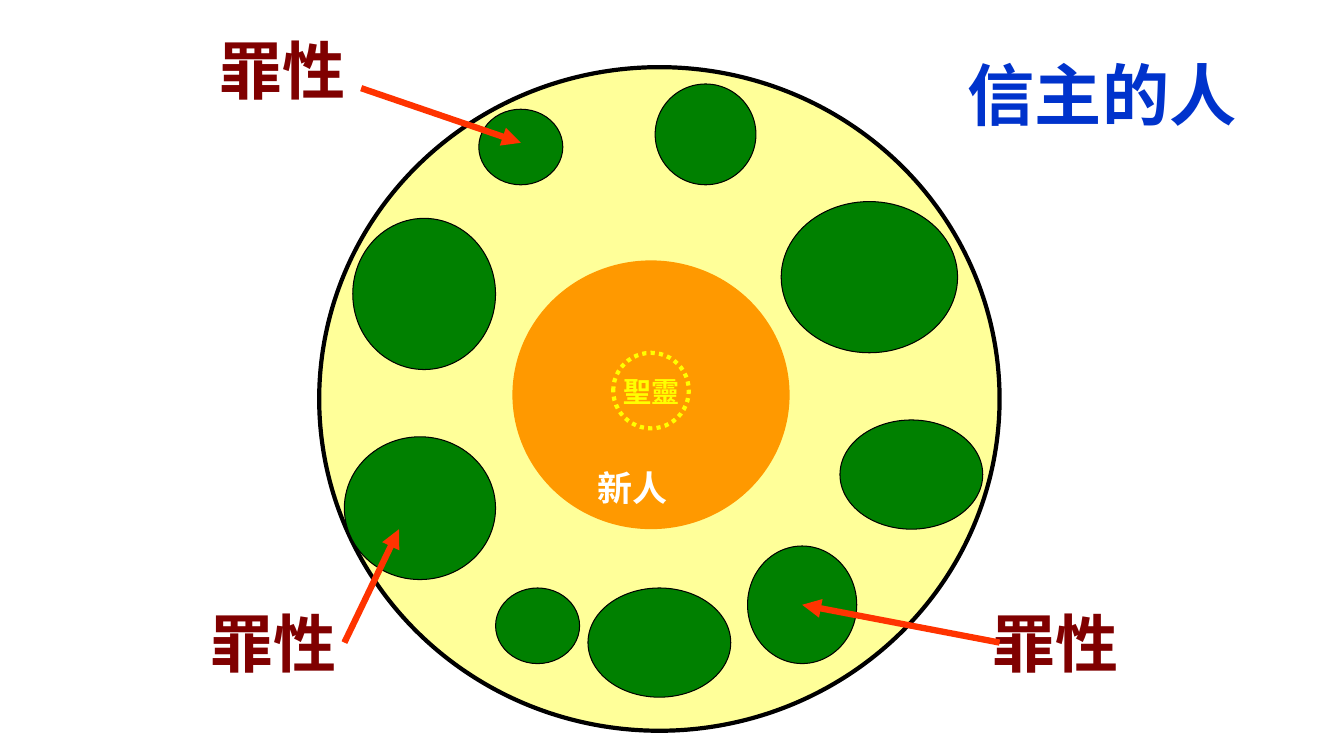
from lxml.etree import SubElement
from pptx import Presentation
from pptx.dml.color import RGBColor
from pptx.enum.dml import MSO_LINE
from pptx.enum.shapes import MSO_CONNECTOR, MSO_SHAPE
from pptx.enum.text import MSO_ANCHOR, MSO_AUTO_SIZE, PP_ALIGN
from pptx.oxml.ns import qn
from pptx.util import Emu, Pt

PX = 9525  # EMU per px, slide is 1280 x 720 px
FONT = "Noto Sans CJK SC"

BLACK = RGBColor(0x00, 0x00, 0x00)
WHITE = RGBColor(0xFF, 0xFF, 0xFF)
CREAM = RGBColor(0xFF, 0xFF, 0x99)
ORANGE = RGBColor(0xFF, 0x99, 0x00)
YELLOW = RGBColor(0xFF, 0xFF, 0x00)
GREEN = RGBColor(0x00, 0x80, 0x00)
MAROON = RGBColor(0x80, 0x00, 0x00)
BLUE = RGBColor(0x00, 0x33, 0xCC)
RED = RGBColor(0xFF, 0x33, 0x00)

PERSON = (304, 64, 648, 632)
# Sin circles, relative to the person circle: left, top, width, height
SINS = [
    (32, 144, 136, 144), (24, 352, 144, 136), (152, 40, 80, 72),
    (496, 336, 136, 104), (408, 456, 104, 112), (440, 128, 168, 144),
    (320, 16, 96, 96), (168, 496, 80, 72), (256, 496, 136, 104),
]
# Sin labels: box, arrow start relative to the box, arrow tip on the slide
SIN_LABELS = [
    ((200, 25, 141, 83), (144, 59), (496, 136)),
    ((936, 571, 141, 83), (16, 41), (764, 576)),
    ((191, 571, 141, 83), (137, 41), (380, 504)),
]


def px(*lengths):
    return [Emu(n * PX) for n in lengths]


def inside(box, part):
    """Move a part given relative to a box onto the slide."""
    return (box[0] + part[0], box[1] + part[1], *part[2:])


def write(tf, text, size, color, wrap=True):
    tf.word_wrap = wrap
    tf.auto_size = MSO_AUTO_SIZE.NONE
    tf.vertical_anchor = MSO_ANCHOR.TOP
    p = tf.paragraphs[0]
    p.alignment = PP_ALIGN.LEFT
    r = p.add_run()
    r.text = text
    r.font.name, r.font.size, r.font.bold = FONT, Pt(size), True
    r.font.color.rgb = color
    SubElement(r.font._element, qn("a:ea"), typeface=FONT)


def add_text(s, box, text, size, color, wrap=True):
    write(s.shapes.add_textbox(*px(*box)).text_frame, text, size, color, wrap)


def add_circle(s, box, fill, line=None, width=0.75, dash=None):
    sp = s.shapes.add_shape(MSO_SHAPE.OVAL, *px(*box))
    sp.shadow.inherit = False
    sp.fill.solid()
    sp.fill.fore_color.rgb = fill
    if line is None:
        sp.line.fill.background()
        return
    sp.line.color.rgb = line
    sp.line.width = Pt(width)
    if dash:
        sp.line.dash_style = dash


def add_arrow(s, start, tip):
    cx = s.shapes.add_connector(MSO_CONNECTOR.STRAIGHT, *px(*start, *tip))
    cx.line.color.rgb = RED
    cx.line.width = Pt(4.5)
    SubElement(cx.line._get_or_add_ln(), qn("a:tailEnd"), type="triangle")
    SubElement(cx._element.spPr, qn("a:effectLst"))


def add_title(s, box):
    title = s.shapes.title
    title.left, title.top, title.width, title.height = px(*box)
    write(title.text_frame, "信主的人", 48, BLUE)


def add_person(s, box):
    add_circle(s, box, CREAM, BLACK, 3)
    # New man with the Holy Spirit at the centre
    add_circle(s, inside(box, (184, 184, 264, 256)), ORANGE)
    add_circle(s, inside(box, (280, 272, 72, 72)), ORANGE, YELLOW, 3,
               MSO_LINE.ROUND_DOT)
    add_text(s, inside(box, (256, 376, 88, 50)), "新人", 25, WHITE)
    add_text(s, inside(box, (280, 288, 80, 41)), "聖靈", 20, YELLOW)
    # Sins around the new man
    for sin in SINS:
        add_circle(s, inside(box, sin), GREEN, BLACK)


def add_sin_label(s, box, start, tip):
    add_text(s, box, "罪性", 45, MAROON, wrap=False)
    add_arrow(s, inside(box, start), tip)


def main():
    prs = Presentation()
    prs.slide_width, prs.slide_height = px(1280, 720)
    s = prs.slides.add_slide(prs.slide_layouts[5])
    add_title(s, (912, 46, 344, 87))
    add_person(s, PERSON)
    for box, start, tip in SIN_LABELS:
        add_sin_label(s, box, start, tip)
    prs.save("out.pptx")


if __name__ == "__main__":
    main()
